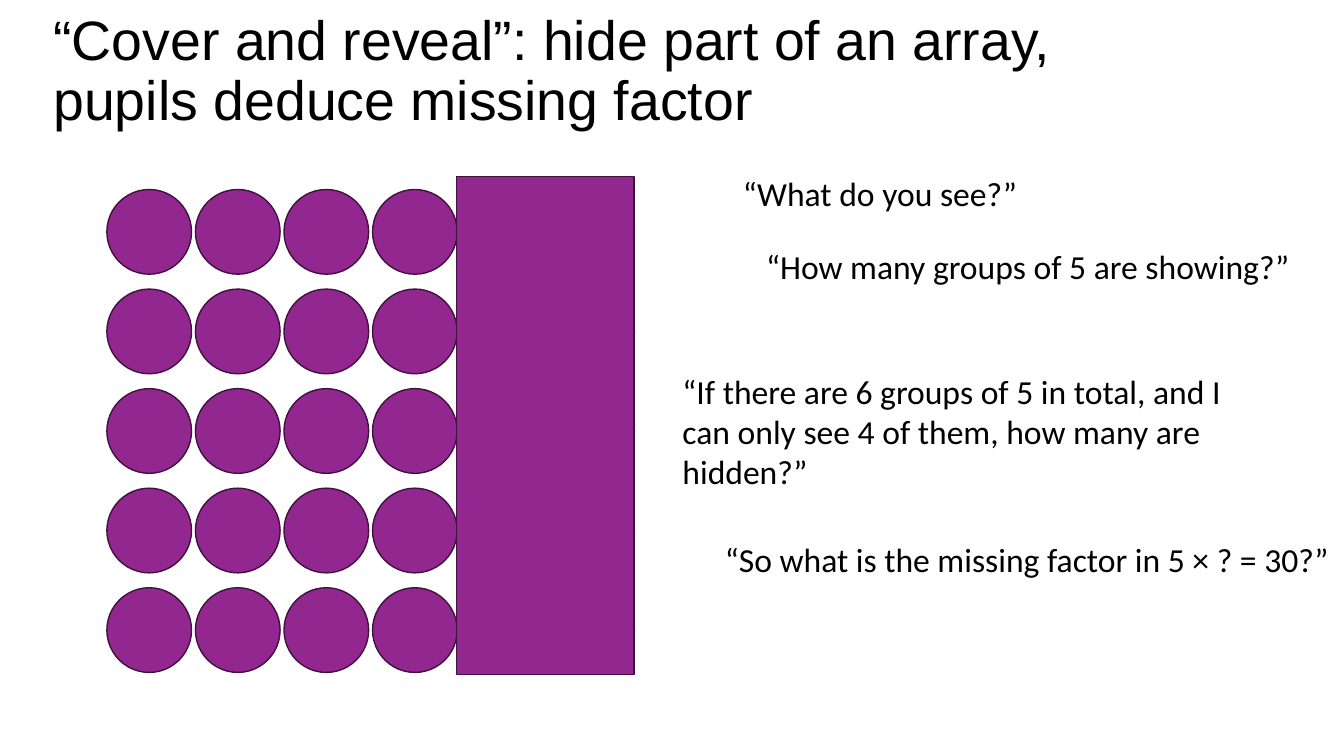
from dataclasses import dataclass
from itertools import product

from pptx import Presentation
from pptx.dml.color import RGBColor
from pptx.enum.shapes import MSO_SHAPE
from pptx.enum.text import MSO_ANCHOR, MSO_AUTO_SIZE
from pptx.util import Inches, Pt


@dataclass(frozen=True)
class Theme:
    purple: RGBColor = RGBColor(0x92, 0x27, 0x8F)
    outline: RGBColor = RGBColor(0x40, 0x11, 0x3F)
    ink: RGBColor = RGBColor(0, 0, 0)
    title_font: str = "Arial"
    body_font: str = "Calibri"
    title_size: float = 39.6
    body_size: float = 24
    outline_width: float = 1


class ArraySlide:
    """Draws on one slide, with boxes as percentages of its width and height."""

    def __init__(self, presentation, theme):
        self.width = presentation.slide_width
        self.height = presentation.slide_height
        self.theme = theme
        self.slide = presentation.slides.add_slide(presentation.slide_layouts[6])

    def place(self, left, top, width, height):
        return (
            round(self.width * left / 100),
            round(self.height * top / 100),
            round(self.width * width / 100),
            round(self.height * height / 100),
        )

    def block(self, kind, box):
        shape = self.slide.shapes.add_shape(kind, *self.place(*box))
        shape.shadow.inherit = False
        shape.fill.solid()
        shape.fill.fore_color.rgb = self.theme.purple
        shape.line.color.rgb = self.theme.outline
        shape.line.width = Pt(self.theme.outline_width)

    def text(self, words, box, font_name, size, wrap=True):
        frame = self.slide.shapes.add_textbox(*self.place(*box)).text_frame
        frame.word_wrap = wrap
        frame.vertical_anchor = MSO_ANCHOR.MIDDLE
        paragraph = frame.paragraphs[0]
        paragraph.text = words
        paragraph.font.name = font_name
        paragraph.font.size = Pt(size)
        paragraph.font.color.rgb = self.theme.ink
        return frame

    def title(self, words, box):
        frame = self.text(words, box, self.theme.title_font, self.theme.title_size)
        frame.margin_bottom = Inches(0.62)
        frame.paragraphs[0].line_spacing = 0.9

    def question(self, words, box, wrap=False):
        frame = self.text(words, box, self.theme.body_font, self.theme.body_size, wrap)
        frame.auto_size = MSO_AUTO_SIZE.SHAPE_TO_FIT_TEXT

    def counters(self, rows, columns, first, pitch, size):
        for row, column in product(rows, columns):
            left = first[0] + column * pitch[0]
            top = first[1] + row * pitch[1]
            self.block(MSO_SHAPE.OVAL, (left, top, *size))

    def cover(self, box):
        self.block(MSO_SHAPE.RECTANGLE, box)


def main():
    presentation = Presentation()
    presentation.slide_width = Inches(13.33)
    presentation.slide_height = Inches(7.5)
    slide = ArraySlide(presentation, Theme())

    slide.title(
        "“Cover and reveal”: hide part of an array, pupils deduce missing factor",
        (3.23, 3.73, 86.27, 19.33),
    )
    slide.counters(
        rows=range(5),
        columns=(0, 1, 2, 3, 5),
        first=(7.95, 25.07),
        pitch=(6.59, 13.17),
        size=(6.3, 11.2),
    )
    slide.question("“What do you see?”", (54.54, 22.13, 22.06, 6.67))
    slide.question("“How many groups of 5 are showing?”", (56.26, 31.87, 40.81, 6.67))
    slide.cover((33.98, 23.33, 13.2, 65.87))
    slide.question(
        "“If there are 6 groups of 5 in total, and I can only see 4 of them, "
        "how many are hidden?”",
        (50.04, 48.27, 44.41, 17.47),
        wrap=True,
    )
    slide.question(
        "“So what is the missing factor in 5 × ? = 30?”", (53.19, 70.67, 46.81, 6.67)
    )
    presentation.save("out.pptx")


if __name__ == "__main__":
    main()
